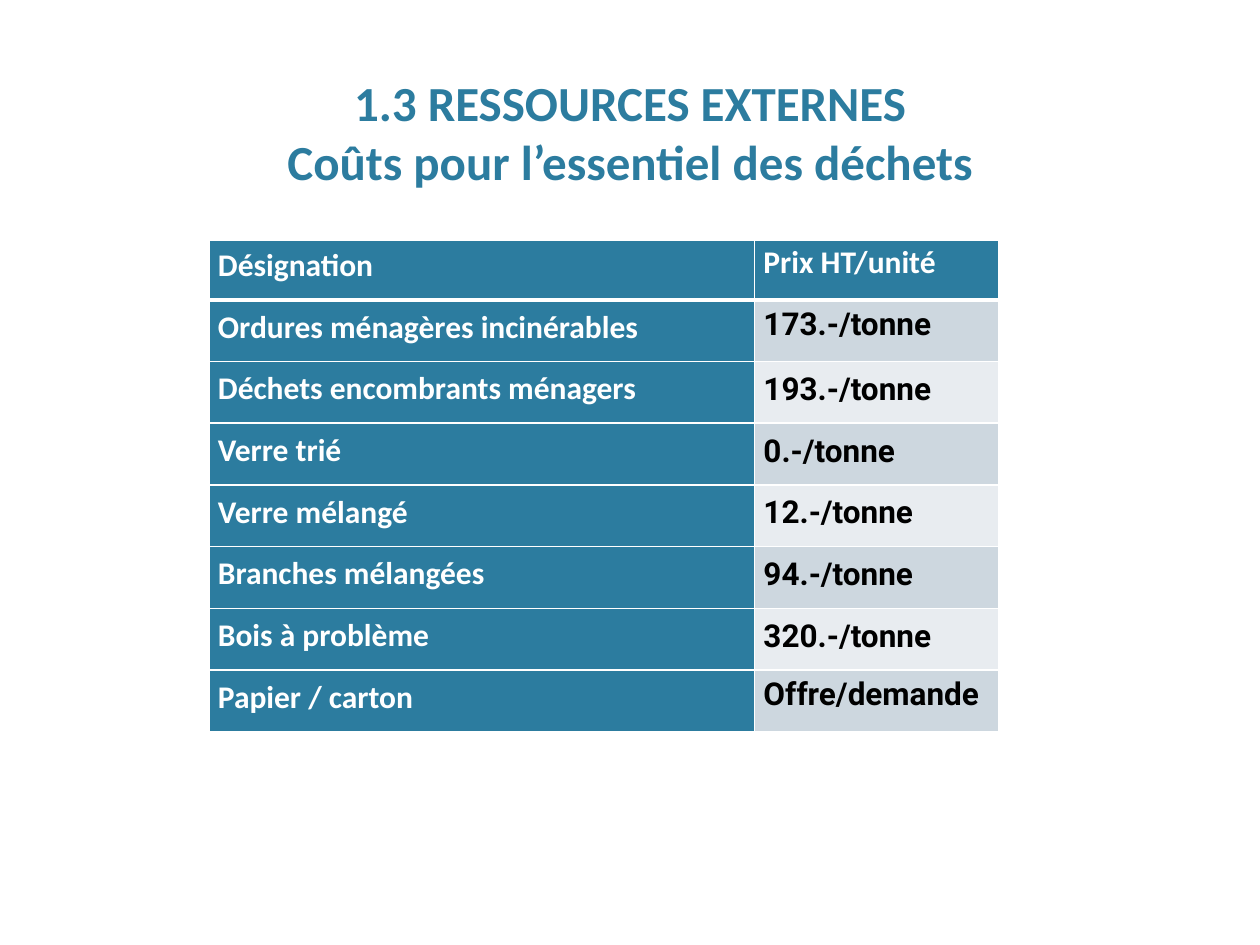
"""Build the slide listing external resource costs for the main kinds of waste."""
import lxml.etree
import pptx
import pptx.dml.color
import pptx.enum.text
import pptx.oxml.ns
import pptx.util

Inches = pptx.util.Inches
Pt = pptx.util.Pt
ANCHOR = pptx.enum.text.MSO_ANCHOR
ALIGN = pptx.enum.text.PP_ALIGN

TITLE_LINES = ["1.3 RESSOURCES EXTERNES", "Coûts pour l’essentiel des déchets"]
HEADINGS = ("Désignation", "Prix HT/unité")
PRICES = [
    ("Ordures ménagères incinérables", "173.-/tonne", 13.9),
    ("Déchets encombrants ménagers", "193.-/tonne", 18),
    ("Verre trié", "0.-/tonne", 18),
    ("Verre mélangé", "12.-/tonne", 18),
    ("Branches mélangées", "94.-/tonne", 18),
    ("Bois à problème", "320.-/tonne", 18),
    ("Papier / carton", "Offre/demande", 13.9),
]
BLUE, WHITE, BLACK = "2C7C9F", "FFFFFF", "000000"
BANDS = ("CDD7DF", "E8ECF0")
COLUMN_WIDTHS = (4.33, 1.94)
HEADER_HEIGHT, ROW_HEIGHT = 0.47, 0.49


def rgb(color):
    return pptx.dml.color.RGBColor.from_string(color)


def add_run(paragraph, text, size, font, color):
    run = paragraph.add_run()
    run.text = text
    run.font.size = Pt(size)
    run.font.name = font
    run.font.bold = True
    run.font.color.rgb = rgb(color)


def set_borders(cell, top, bottom):
    qualify = pptx.oxml.ns.qn
    properties = cell._tc.get_or_add_tcPr()
    for side, width in (("L", 1), ("R", 1), ("T", top), ("B", bottom)):
        line = lxml.etree.SubElement(properties, qualify(f"a:ln{side}"), w=str(Pt(width)))
        fill = lxml.etree.SubElement(line, qualify("a:solidFill"))
        lxml.etree.SubElement(fill, qualify("a:srgbClr"), val=WHITE)


def fill_cell(cell, text, fill, font, color, line_spacing, space_after, borders):
    set_borders(cell, *borders)
    cell.fill.solid()
    cell.fill.fore_color.rgb = rgb(fill)
    cell.vertical_anchor = ANCHOR.MIDDLE
    cell.margin_left = cell.margin_right = Inches(0.07)
    cell.margin_top = cell.margin_bottom = 0
    paragraph = cell.text_frame.paragraphs[0]
    paragraph.alignment = ALIGN.JUSTIFY
    paragraph.line_spacing = Pt(line_spacing)
    paragraph.space_after = Pt(space_after)
    add_run(paragraph, text, 18, font, color)


def add_title(slide):
    box = slide.shapes.add_textbox(Inches(0.6), Inches(0.55), Inches(8.8), Inches(0.96))
    frame = box.text_frame
    frame.word_wrap = True
    frame.vertical_anchor = ANCHOR.BOTTOM
    frame.margin_top = frame.margin_bottom = 0
    paragraph = frame.paragraphs[0]
    paragraph.alignment = ALIGN.CENTER
    for index, text in enumerate(TITLE_LINES):
        if index:
            paragraph.add_line_break()
        add_run(paragraph, text, 28, "Calibri", BLUE)


def add_price_table(slide):
    heights = [HEADER_HEIGHT] + [ROW_HEIGHT] * len(PRICES)
    table = slide.shapes.add_table(
        len(heights), len(COLUMN_WIDTHS), Inches(1.66), Inches(1.91),
        Inches(sum(COLUMN_WIDTHS)), Inches(sum(heights))).table
    for column, width in zip(table.columns, COLUMN_WIDTHS):
        column.width = Inches(width)
    for row, height in zip(table.rows, heights):
        row.height = Inches(height)

    for column, (text, spacing, after) in enumerate(zip(HEADINGS, (17, 13.9), (12, 0))):
        fill_cell(table.cell(0, column), text, BLUE, "Calibri", WHITE, spacing, after, (1, 3))
    for row, (name, price, spacing) in enumerate(PRICES, start=1):
        borders = (3 if row == 1 else 1, 1)
        band = BANDS[(row - 1) % 2]
        fill_cell(table.cell(row, 0), name, BLUE, "Calibri", WHITE, 18, 12, borders)
        fill_cell(table.cell(row, 1), price, band, "Roboto", BLACK, spacing, 0, borders)


def main():
    presentation = pptx.Presentation()
    presentation.slide_width = Inches(10)
    presentation.slide_height = Inches(7.5)
    slide = presentation.slides.add_slide(presentation.slide_layouts[6])
    add_title(slide)
    add_price_table(slide)
    presentation.save("out.pptx")


if __name__ == "__main__":
    main()
